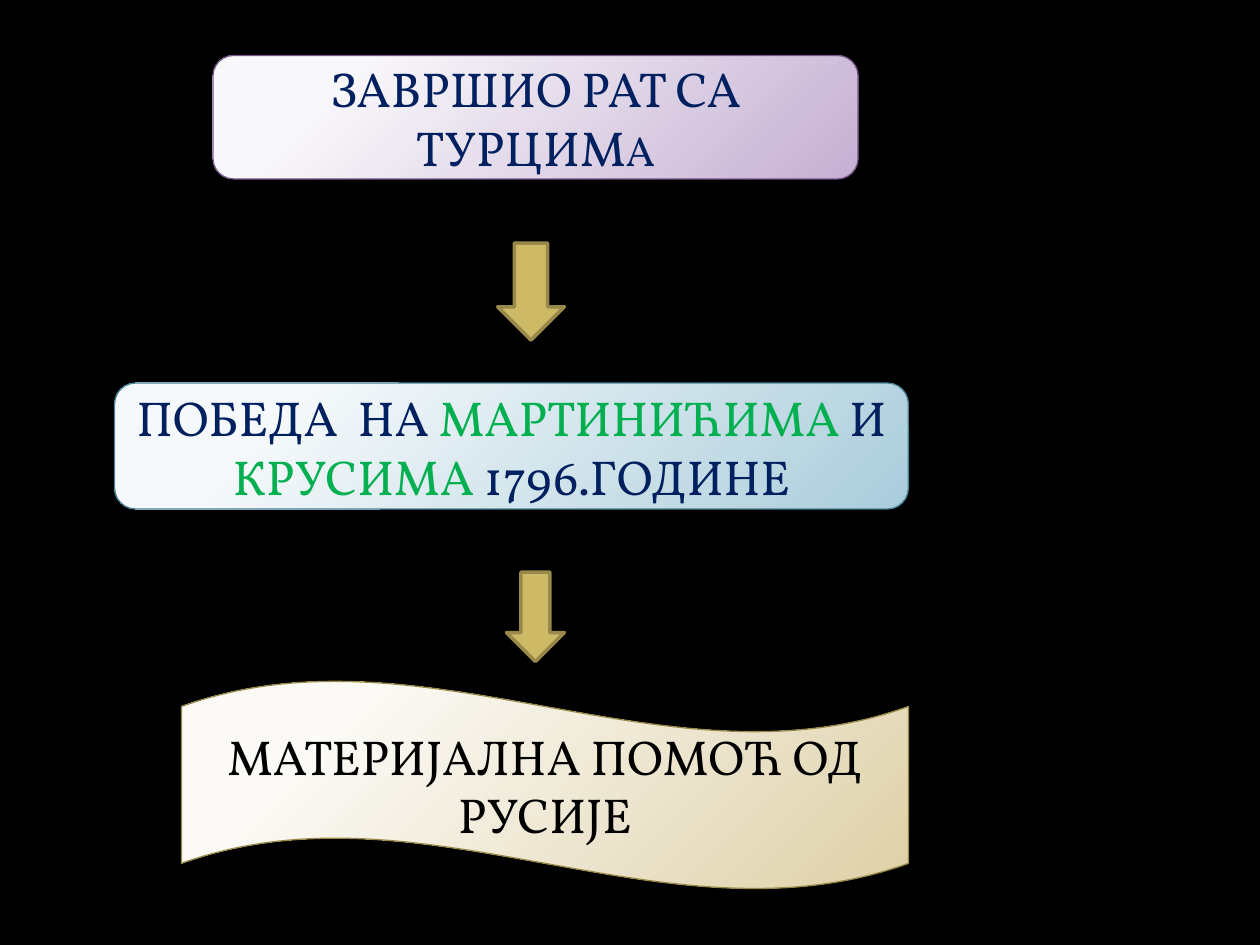
from lxml.etree import SubElement
from pptx import Presentation
from pptx.dml.color import RGBColor
from pptx.enum.shapes import MSO_SHAPE
from pptx.enum.text import MSO_ANCHOR, PP_ALIGN
from pptx.oxml.ns import qn
from pptx.util import Inches, Pt

BLACK = RGBColor(0x00, 0x00, 0x00)
NAVY = RGBColor(0x00, 0x20, 0x60)
GREEN = RGBColor(0x00, 0xB0, 0x50)
GOLD = RGBColor(0xCE, 0xB9, 0x66)
DARK_GOLD = RGBColor(0x98, 0x89, 0x4B)
PURPLE = [RGBColor(0xF8, 0xF7, 0xFA), RGBColor(0xC5, 0xB0, 0xD2)]
PURPLE_LINE = RGBColor(0x77, 0x56, 0x8A)
BLUE = [RGBColor(0xF6, 0xF9, 0xFB), RGBColor(0xAA, 0xCD, 0xDB)]
BLUE_LINE = RGBColor(0x4A, 0x82, 0x96)
SAND = [RGBColor(0xFB, 0xFA, 0xF6), RGBColor(0xDE, 0xD1, 0xA8)]
SAND_LINE = RGBColor(0x99, 0x89, 0x46)


def add_outlined(page, kind, place, line_color, line_width):
    shape = page.shapes.add_shape(kind, *[Inches(length) for length in place])
    shape.shadow.inherit = False
    shape.line.color.rgb = line_color
    shape.line.width = Pt(line_width)
    return shape


def fill_radial(shape, colors):
    shape.fill.gradient()
    for stop, color, position in zip(shape.fill.gradient_stops, colors, (0.2, 1)):
        stop.color.rgb = color
        stop.position = position
    gradient = shape.element.spPr.find(qn("a:gradFill"))
    gradient.remove(gradient.find(qn("a:lin")))
    circle = SubElement(gradient, qn("a:path"), {"path": "circle"})
    SubElement(circle, qn("a:fillToRect"),
               {"l": "-15000", "t": "-15000", "r": "115000", "b": "115000"})


deck = Presentation()
deck.slide_width = Inches(10)
deck.slide_height = Inches(7.5)
page = deck.slides.add_slide(deck.slide_layouts[6])
page.background.fill.solid()
page.background.fill.fore_color.rgb = BLACK

events = [
    (MSO_SHAPE.FLOWCHART_ALTERNATE_PROCESS, (1.69, 0.44, 5.12, 0.98), PURPLE, PURPLE_LINE,
     [("ЗАВРШИО РАТ СА ТУРЦИМ", NAVY, 28), ("А", NAVY, 24)]),
    (MSO_SHAPE.ROUNDED_RECTANGLE, (0.91, 3.04, 6.3, 1), BLUE, BLUE_LINE,
     [("ПОБЕДА  НА ", NAVY, 28), ("МАРТИНИЋИМА", GREEN, 28), (" И ", NAVY, 28),
      ("КРУСИМА", GREEN, 28), (" 1796.ГОДИНЕ", NAVY, 28)]),
    (MSO_SHAPE.WAVE, (1.44, 5.4, 5.77, 1.66), SAND, SAND_LINE,
     [("МАТЕРИЈАЛНА ПОМОЋ ОД РУСИЈЕ", BLACK, 28)]),
]
for kind, place, colors, line_color, spans in events:
    box = add_outlined(page, kind, place, line_color, 0.75)
    fill_radial(box, colors)
    frame = box.text_frame
    frame.word_wrap = True
    frame.vertical_anchor = MSO_ANCHOR.MIDDLE
    para = frame.paragraphs[0]
    para.alignment = PP_ALIGN.CENTER
    para.font.name = "Vollkorn"
    for text, color, size in spans:
        span = para.add_run()
        span.text = text
        span.font.color.rgb = color
        span.font.size = Pt(size)

for place in [(3.95, 1.93, 0.53, 0.77), (4.02, 4.54, 0.46, 0.71)]:
    arrow = add_outlined(page, MSO_SHAPE.DOWN_ARROW, place, DARK_GOLD, 2)
    arrow.fill.solid()
    arrow.fill.fore_color.rgb = GOLD

deck.save("out.pptx")
